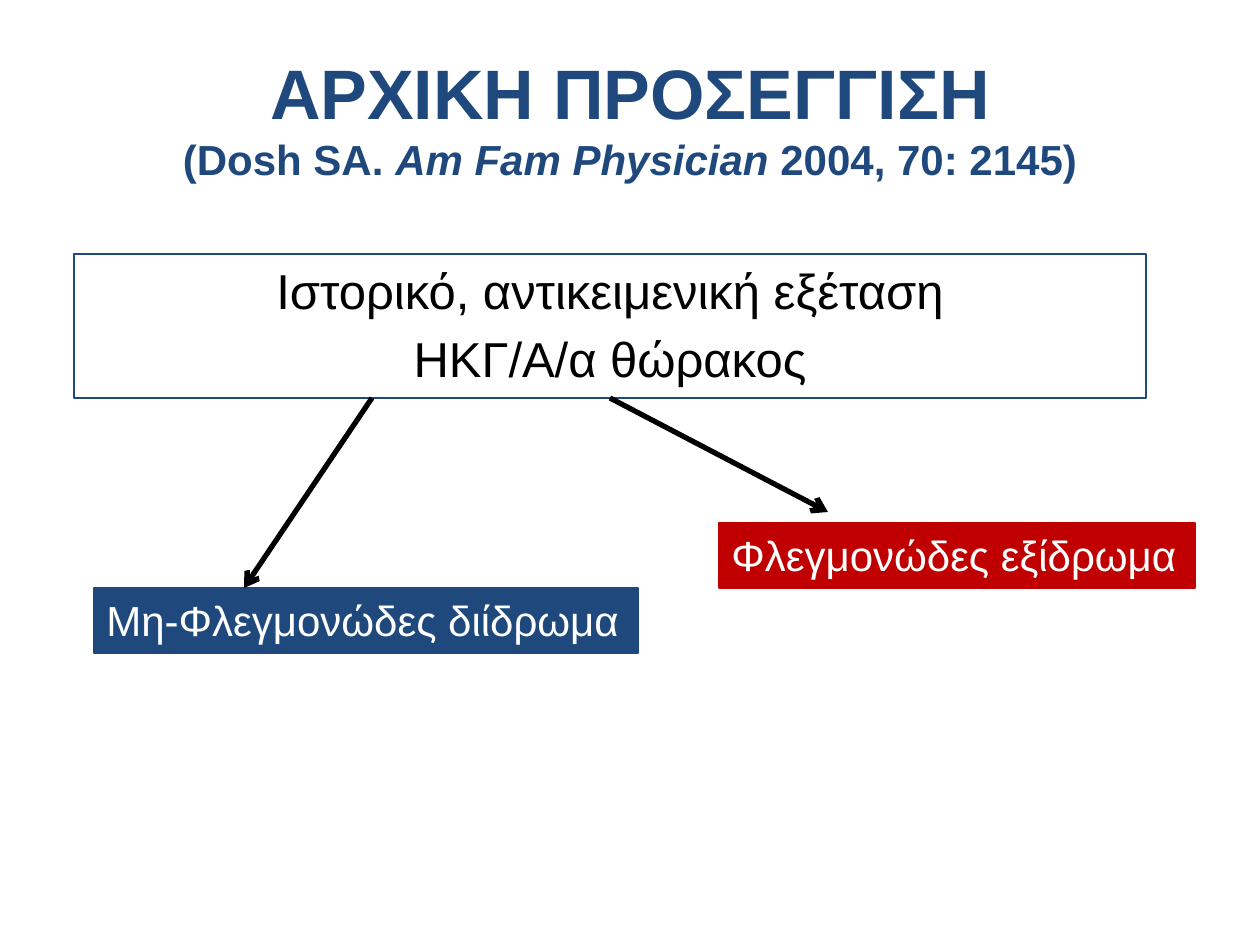
from pptx import Presentation
from pptx import util as u
from pptx.dml.color import RGBColor
from pptx.enum import shapes, text
from pptx.oxml.ns import qn
from lxml import etree

PX = 914400 // 126
NAVY = RGBColor(0x1F, 0x49, 0x7D)
RED = RGBColor(0xC0, 0x00, 0x00)
BLACK = RGBColor(0x00, 0x00, 0x00)
WHITE = RGBColor(0xFF, 0xFF, 0xFF)

prs = Presentation()
prs.slide_width, prs.slide_height = 1260 * PX, 945 * PX
s = prs.slides.add_slide(prs.slide_layouts[6])


def add_text(p, content, size=24, color=BLACK, bold=False, italic=False):
    r = p.add_run()
    r.text = content
    r.font.name = "Arial"
    r.font.size = u.Pt(size)
    r.font.color.rgb = color
    r.font.bold = bold
    r.font.italic = italic


def add_box(x, y, w, h, line, fill=None):
    sp = s.shapes.add_shape(shapes.MSO_SHAPE.RECTANGLE, x * PX, y * PX, w * PX, h * PX)
    sp.shadow.inherit = False
    if fill is None:
        sp.fill.background()
    else:
        sp.fill.solid()
        sp.fill.fore_color.rgb = fill
    sp.line.color.rgb = line
    sp.line.width = u.Pt(0.75)
    sp.text_frame.word_wrap = True
    sp.text_frame.vertical_anchor = text.MSO_ANCHOR.TOP
    return sp


# Title with citation
tf = s.shapes.add_textbox(63 * PX, 38 * PX, 1134 * PX, 158 * PX).text_frame
tf.word_wrap = True
tf.vertical_anchor = text.MSO_ANCHOR.MIDDLE
p = tf.paragraphs[0]
p.alignment = text.PP_ALIGN.CENTER
add_text(p, "ΑΡΧΙΚΗ ΠΡΟΣΕΓΓΙΣΗ", size=40, color=NAVY, bold=True)
p.add_line_break()
add_text(p, "(Dosh SA. ", color=NAVY, bold=True)
add_text(p, "Am Fam Physician ", color=NAVY, bold=True, italic=True)
add_text(p, "2004, 70: 2145)", color=NAVY, bold=True)

# Starting examination
exam = add_box(74, 254, 1072, 144, NAVY)
tf = exam.text_frame
for i, step in enumerate(["Ιστορικό, αντικειμενική εξέταση", "ΗΚΓ/Α/α θώρακος"]):
    p = tf.add_paragraph() if i else tf.paragraphs[0]
    p.alignment = text.PP_ALIGN.CENTER
    p.space_before = u.Pt(5.6 if i else 0)
    add_text(p, step, size=28)

# Two outcomes
for x, y, w, color, label in [
    (719, 523, 476, RED, "Φλεγμονώδες εξίδρωμα"),
    (94, 588, 544, NAVY, "Μη-Φλεγμονώδες διίδρωμα"),
]:
    p = add_box(x, y, w, 65, color, fill=color).text_frame.paragraphs[0]
    p.alignment = text.PP_ALIGN.LEFT
    add_text(p, label, color=WHITE)

# Arrows to the outcomes; the first leaves from the middle of the box
for x1, y1, x2, y2, source in [(610, 398, 828, 512, exam), (372, 398, 244, 588, None)]:
    c = s.shapes.add_connector(
        shapes.MSO_CONNECTOR.STRAIGHT, x1 * PX, y1 * PX, x2 * PX, y2 * PX)
    if source is not None:
        c.begin_connect(source, 2)
    c.line.color.rgb = BLACK
    c.line.width = u.Pt(3)
    etree.SubElement(c.line._get_or_add_ln(), qn("a:tailEnd"), type="arrow")
    etree.SubElement(c._element.spPr, qn("a:effectLst"))

prs.save("out.pptx")
